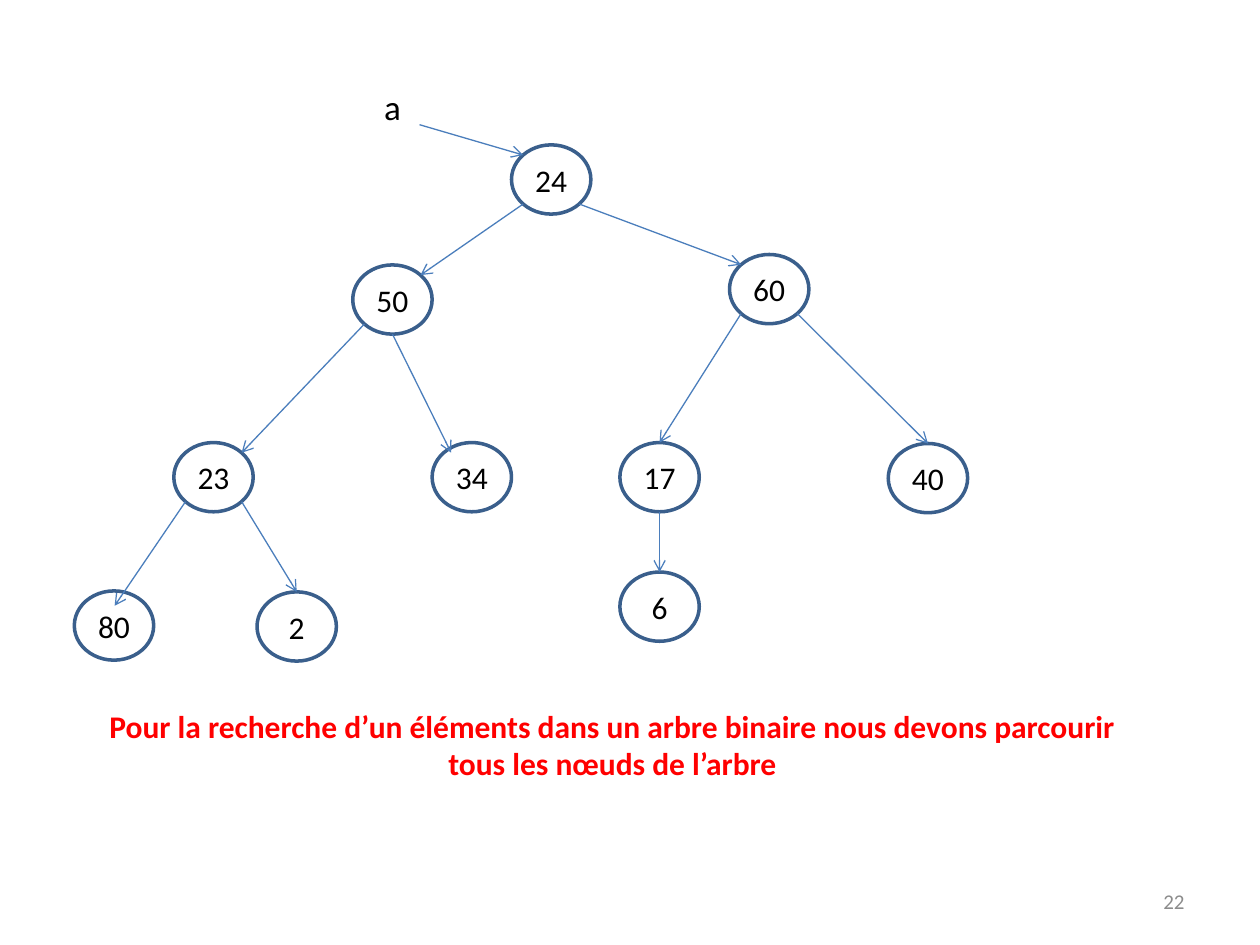
from dataclasses import dataclass
from math import sqrt

from lxml import etree
from pptx import Presentation
from pptx import util as u
from pptx.dml.color import RGBColor
from pptx.enum import shapes, text
from pptx.oxml.ns import qn

FONT = "Calibri"
BLACK = RGBColor(0x00, 0x00, 0x00)
RED = RGBColor(0xFF, 0x00, 0x00)
GREY = RGBColor(0x8C, 0x8C, 0x8C)
OUTLINE = RGBColor(0x3A, 0x5F, 0x8C)
ARROW = RGBColor(0x4B, 0x7E, 0xBC)

# Grid of 100 columns by 100 rows over the slide
WIDTH, HEIGHT = u.Inches(10), u.Inches(7.5)
NODE_COLS, NODE_ROWS = 6.3, 7.33

# Direction of each attachment point from a node's centre
DIAGONAL = 1 / sqrt(2)
SIDES = {
    "top": (0, -1),
    "bottom": (0, 1),
    "top left": (-DIAGONAL, -DIAGONAL),
    "top right": (DIAGONAL, -DIAGONAL),
    "bottom left": (-DIAGONAL, DIAGONAL),
    "bottom right": (DIAGONAL, DIAGONAL),
}


@dataclass(frozen=True)
class Node:
    label: str
    col: float
    row: float

    def site(self, side: str) -> tuple[float, float]:
        dx, dy = SIDES[side]
        return self.col + dx * NODE_COLS / 2, self.row + dy * NODE_ROWS / 2


@dataclass(frozen=True)
class Edge:
    """A link; end is a side of the child or a (column, row) point."""
    parent: str
    start: str
    child: str
    end: str | tuple[float, float]


NODES = {n.label: n for n in (
    Node("24", 43.75, 19),
    Node("50", 31.15, 31.7),
    Node("60", 61.05, 30.6),
    Node("23", 16.95, 50.5),
    Node("40", 73.65, 50.6),
    Node("17", 52.35, 50.5),
    Node("34", 37.45, 50.5),
    Node("80", 9.05, 66.2),
    Node("6", 52.35, 64.2),
    Node("2", 23.55, 66.3),
)}

EDGES = (
    Edge("24", "bottom left", "50", "top right"),
    Edge("24", "bottom right", "60", "top left"),
    Edge("50", "bottom left", "23", "top right"),
    Edge("60", "bottom right", "40", "top"),
    Edge("50", "bottom", "34", (35.8, 47.9)),
    Edge("60", "bottom left", "17", "top"),
    Edge("17", "bottom", "6", "top"),
    Edge("23", "bottom left", "80", (9.1, 64.1)),
    Edge("23", "bottom right", "2", "top"),
)


def x(cols: float) -> int:
    return round(WIDTH * cols / 100)


def y(rows: float) -> int:
    return round(HEIGHT * rows / 100)


def style(p, size: float, color: RGBColor, align=None, bold=None) -> None:
    p.alignment = align
    for r in p.runs:
        r.font.name, r.font.size, r.font.bold = FONT, u.Pt(size), bold
        r.font.color.rgb = color


def add_node(slide, node: Node) -> None:
    sp = slide.shapes.add_shape(
        shapes.MSO_SHAPE.OVAL,
        x(node.col - NODE_COLS / 2), y(node.row - NODE_ROWS / 2),
        x(NODE_COLS), y(NODE_ROWS))
    sp.shadow.inherit = False
    sp.fill.background()
    sp.line.color.rgb, sp.line.width = OUTLINE, u.Pt(2)
    tf = sp.text_frame
    tf.margin_left = tf.margin_right = u.Inches(0.08)
    tf.margin_top = tf.margin_bottom = u.Inches(0.04)
    tf.vertical_anchor = text.MSO_ANCHOR.MIDDLE
    tf.text = node.label
    style(tf.paragraphs[0], 18, BLACK, text.PP_ALIGN.CENTER)


def add_arrow(slide, start: tuple[float, float], end: tuple[float, float]) -> None:
    line = slide.shapes.add_connector(
        shapes.MSO_CONNECTOR.STRAIGHT,
        x(start[0]), y(start[1]), x(end[0]), y(end[1]))
    line.line.color.rgb, line.line.width = ARROW, u.Pt(0.75)
    etree.SubElement(line.line._get_or_add_ln(), qn("a:tailEnd"), type="arrow")
    etree.SubElement(line._element.spPr, qn("a:effectLst"))


def add_text(slide, col: float, row: float, cols: float, rows: float, words: str):
    tf = slide.shapes.add_textbox(x(col), y(row), x(cols), y(rows)).text_frame
    tf.word_wrap = True
    tf.text = words
    return tf


def main() -> None:
    prs = Presentation()
    prs.slide_width, prs.slide_height = WIDTH, HEIGHT
    slide = prs.slides.add_slide(prs.slide_layouts[6])

    number = add_text(slide, 71.7, 92.67, 23.3, 5.33, "22")
    number.vertical_anchor = text.MSO_ANCHOR.MIDDLE
    style(number.paragraphs[0], 12, GREY, text.PP_ALIGN.RIGHT)

    for node in NODES.values():
        add_node(slide, node)
    for edge in EDGES:
        end = edge.end
        if isinstance(end, str):
            end = NODES[edge.child].site(end)
        add_arrow(slide, NODES[edge.parent].site(edge.start), end)

    add_arrow(slide, (33.3, 13.2), NODES["24"].site("top left"))
    root = add_text(slide, 29.5, 8.4, 4.7, 5.87, "a")
    style(root.paragraphs[0], 20, BLACK)

    remark = add_text(
        slide, 7.7, 74.13, 83, 9.47,
        "Pour la recherche d’un éléments dans un arbre binaire nous devons parcourir\n"
        "tous les nœuds de l’arbre")
    remark.word_wrap = False
    remark.auto_size = text.MSO_AUTO_SIZE.SHAPE_TO_FIT_TEXT
    for p, align in zip(remark.paragraphs, (text.PP_ALIGN.LEFT, text.PP_ALIGN.CENTER)):
        style(p, 18, RED, align, bold=True)

    prs.save("out.pptx")


if __name__ == "__main__":
    main()
